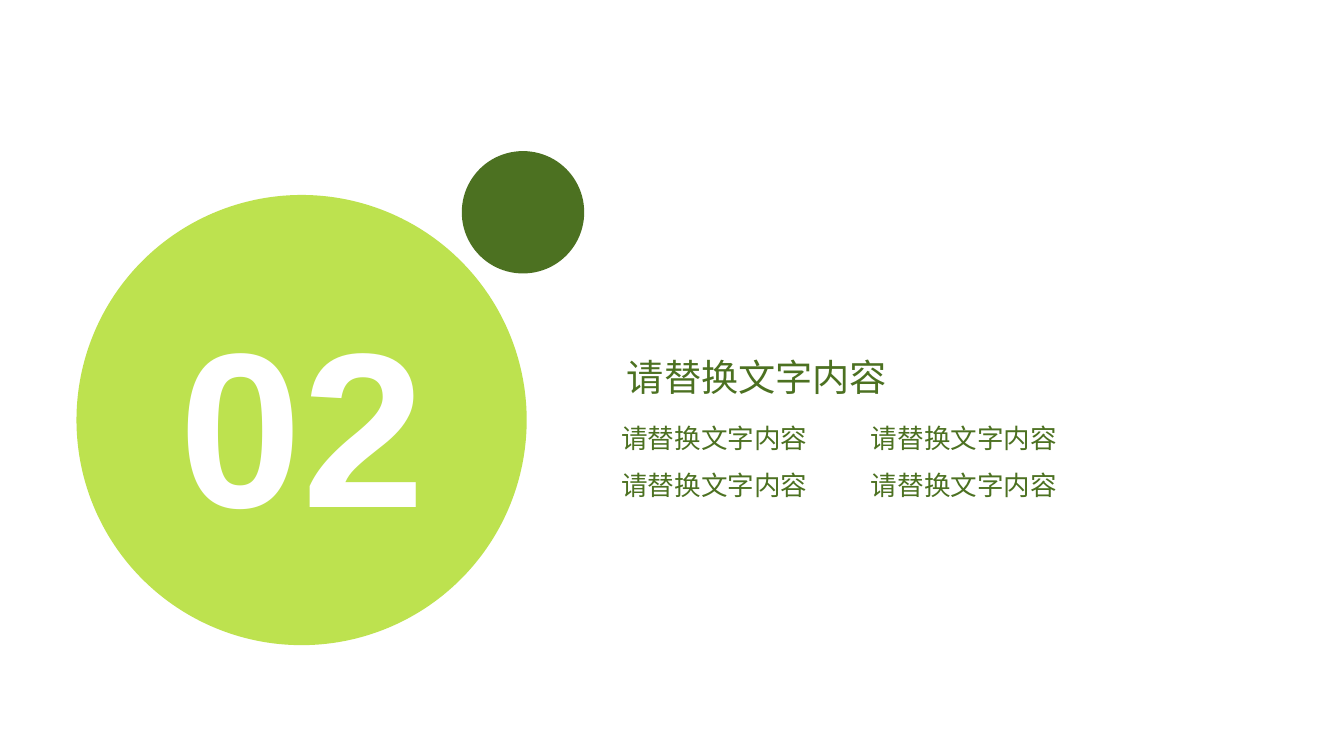
import pptx
import pptx.util
import pptx.dml.color
import pptx.enum.shapes
import pptx.enum.text
import pptx.oxml.ns
from lxml import etree

Pt = pptx.util.Pt
ALIGN = pptx.enum.text.PP_ALIGN

# Content
SECTION_NUMBER = "02"
TITLE = "请替换文字内容"
TOPIC_ROWS = [
    ("请替换文字内容", "请替换文字内容"),
    ("请替换文字内容", "请替换文字内容"),
]

# Style and layout, in points
FONT = "Arial"
LIME, GREEN, WHITE = "A2D605", "4C7121", "FFFFFF"
SLIDE_SIZE = (1012.32, 569.52)
CIRCLES = [  # left, top, diameter, colour, opacity in percent
    (57.6, 146.9, 339.1, LIME, 70),
    (347.8, 113.8, 92.2, GREEN, 100),
]
NUMBER_BOX = (108, 216, 239, 199.4)
TITLE_BOX = (465.1, 257, 210.2, 47.5)
TOPIC_LEFT, TOPIC_TOP = 468, 312.8
TOPIC_WIDTH, TOPIC_HEIGHT = 152.6, 28.8
COLUMN_STEP, ROW_STEP = 188, 36


def colour(hex_value):
    return pptx.dml.color.RGBColor.from_string(hex_value)


def add_circle(slide, left, top, diameter, fill, opacity):
    shape = slide.shapes.add_shape(
        pptx.enum.shapes.MSO_SHAPE.OVAL,
        Pt(left), Pt(top), Pt(diameter), Pt(diameter))
    shape.shadow.inherit = False
    shape.line.fill.background()
    shape.fill.solid()
    shape.fill.fore_color.rgb = colour(fill)
    if opacity < 100:
        qn = pptx.oxml.ns.qn
        fill_element = shape.element.spPr.find(qn("a:solidFill"))
        alpha = etree.SubElement(fill_element[0], qn("a:alpha"))
        alpha.set("val", str(opacity * 1000))


def add_text(slide, box, text, size, hex_value=GREEN, bold=False,
             align=ALIGN.JUSTIFY, spacing=1.2, inset=True, wrap=True):
    shape = slide.shapes.add_textbox(*(Pt(length) for length in box))
    frame = shape.text_frame
    frame.word_wrap = wrap
    frame.auto_size = pptx.enum.text.MSO_AUTO_SIZE.SHAPE_TO_FIT_TEXT
    if not inset:
        frame.margin_left = frame.margin_right = 0
        frame.margin_top = frame.margin_bottom = 0
    paragraph = frame.paragraphs[0]
    paragraph.text = text
    paragraph.alignment = align
    paragraph.line_spacing = spacing
    paragraph.font.name = FONT
    paragraph.font.size = Pt(size)
    paragraph.font.bold = bold
    paragraph.font.color.rgb = colour(hex_value)


def main():
    presentation = pptx.Presentation()
    presentation.slide_width, presentation.slide_height = map(Pt, SLIDE_SIZE)
    slide = presentation.slides.add_slide(presentation.slide_layouts[6])

    # Circles with the section number
    for circle in CIRCLES:
        add_circle(slide, *circle)
    add_text(slide, NUMBER_BOX, SECTION_NUMBER, 166, WHITE, bold=True,
             align=ALIGN.CENTER, spacing=1.0, inset=False)

    # Section title and the grid of topics
    add_text(slide, TITLE_BOX, TITLE, 28, wrap=False)
    for row, topics in enumerate(TOPIC_ROWS):
        for column, topic in enumerate(topics):
            box = (TOPIC_LEFT + column * COLUMN_STEP,
                   TOPIC_TOP + row * ROW_STEP, TOPIC_WIDTH, TOPIC_HEIGHT)
            add_text(slide, box, topic, 20, inset=False)

    presentation.save("out.pptx")


if __name__ == "__main__":
    main()
